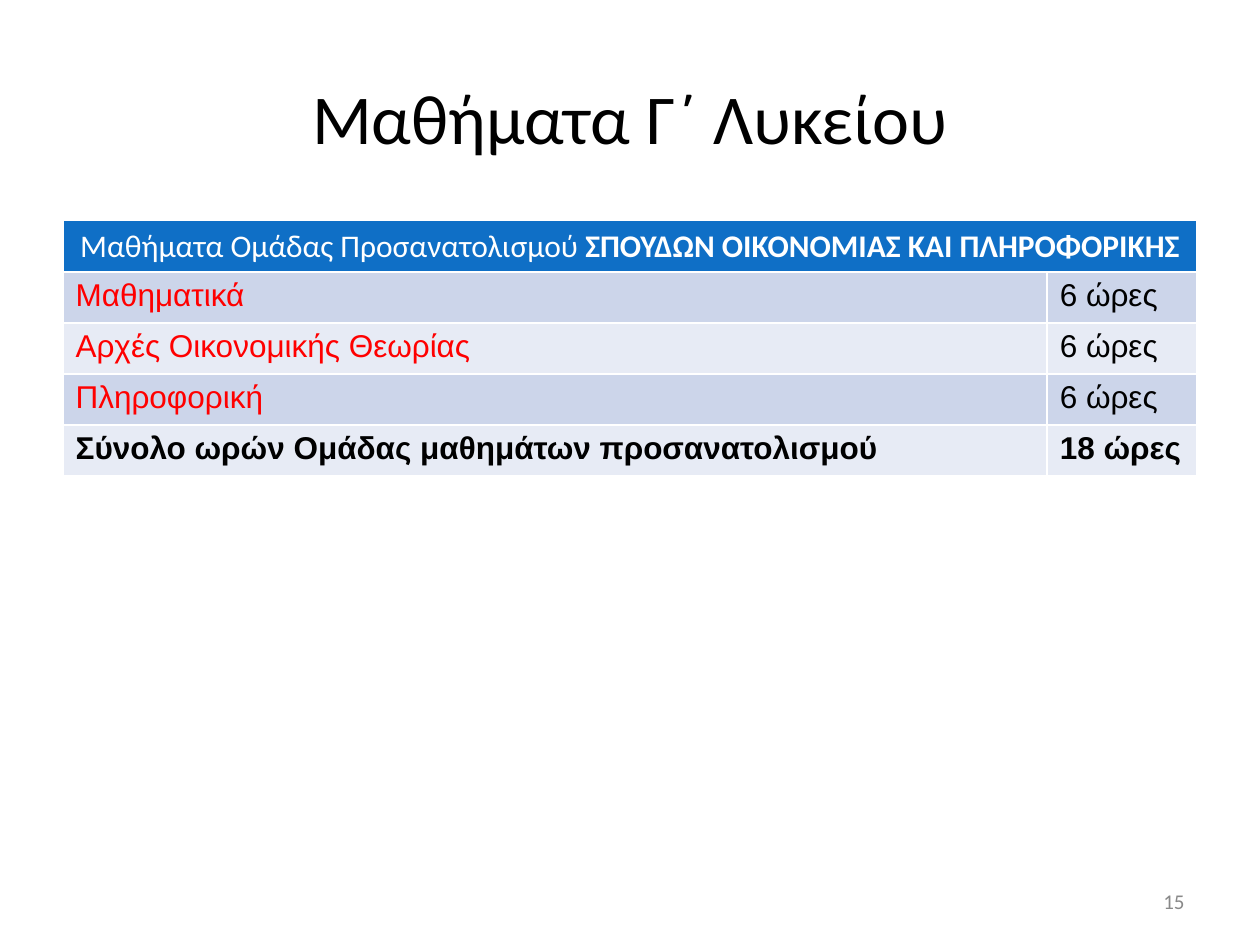
import pptx
import pptx.dml.color
import pptx.enum.text
import pptx.util

Cm = pptx.util.Cm
Align = pptx.enum.text.PP_ALIGN


def color(hex_string):
    return pptx.dml.color.RGBColor.from_string(hex_string)


class SlideBuilder:
    heading_font = "Calibri"
    body_font = "Arial"
    black = "000000"
    white = "FFFFFF"
    red = "FF0000"
    gray = "898989"
    header_fill = "0F6FC6"
    band_fills = ("CCD5EA", "E7EBF5")
    body_size = 18

    def __init__(self, slide):
        self.slide = slide

    def add_run(self, paragraph, text, font, size, text_color, bold=False):
        run = paragraph.add_run()
        run.text = text
        run.font.name = font
        run.font.size = pptx.util.Pt(size)
        run.font.bold = bold
        run.font.color.rgb = color(text_color)

    def add_text(self, text, left, top, width, height, size, text_color, alignment):
        shape = self.slide.shapes.add_textbox(Cm(left), Cm(top), Cm(width), Cm(height))
        frame = shape.text_frame
        frame.word_wrap = True
        frame.vertical_anchor = pptx.enum.text.MSO_ANCHOR.MIDDLE
        paragraph = frame.paragraphs[0]
        paragraph.alignment = alignment
        self.add_run(paragraph, text, self.heading_font, size, text_color)

    def fill_cell(self, cell, fill):
        cell.fill.solid()
        cell.fill.fore_color.rgb = color(fill)

    def add_course_table(self, header_parts, courses, total, left, top, widths, row_height):
        rows = [*courses, total]
        row_count = len(rows) + 1
        table = self.slide.shapes.add_table(
            row_count, len(widths), Cm(left), Cm(top),
            Cm(sum(widths)), Cm(row_height * row_count)).table
        for column, width in zip(table.columns, widths):
            column.width = Cm(width)

        header = table.cell(0, 0)
        header.merge(table.cell(0, len(widths) - 1))
        self.fill_cell(header, self.header_fill)
        paragraph = header.text_frame.paragraphs[0]
        paragraph.alignment = Align.CENTER
        for text, bold in header_parts:
            self.add_run(paragraph, text, self.heading_font, self.body_size, self.white, bold)

        for row_index, row in enumerate(rows):
            is_total = row is total
            name_color = self.black if is_total else self.red
            for column_index, (text, text_color) in enumerate(zip(row, (name_color, self.black))):
                cell = table.cell(row_index + 1, column_index)
                self.fill_cell(cell, self.band_fills[row_index % 2])
                self.add_run(cell.text_frame.paragraphs[0], text, self.body_font,
                             self.body_size, text_color, is_total)


def main():
    presentation = pptx.Presentation()
    presentation.slide_width = Cm(25.4)
    presentation.slide_height = Cm(19.05)
    slide = presentation.slides.add_slide(presentation.slide_layouts[6])
    builder = SlideBuilder(slide)

    builder.add_text("Μαθήματα Γ΄ Λυκείου", 1.27, 0.76, 22.86, 3.18, 40,
                     builder.black, Align.CENTER)
    builder.add_course_table(
        header_parts=[("Μαθήματα Ομάδας Προσανατολισμού", False),
                      (" ΣΠΟΥΔΩΝ ΟΙΚΟΝΟΜΙΑΣ ΚΑΙ ΠΛΗΡΟΦΟΡΙΚΗΣ", True)],
        courses=[("Μαθηματικά", "6 ώρες"),
                 ("Αρχές Οικονομικής Θεωρίας", "6 ώρες"),
                 ("Πληροφορική", "6 ώρες")],
        total=("Σύνολο ωρών Ομάδας μαθημάτων προσανατολισμού", "18 ώρες"),
        left=1.27, top=4.45, widths=(19.84, 3.02), row_height=1.03)
    builder.add_text("15", 18.21, 17.65, 5.92, 1.02, 12, builder.gray, Align.RIGHT)

    presentation.save("out.pptx")


if __name__ == "__main__":
    main()
